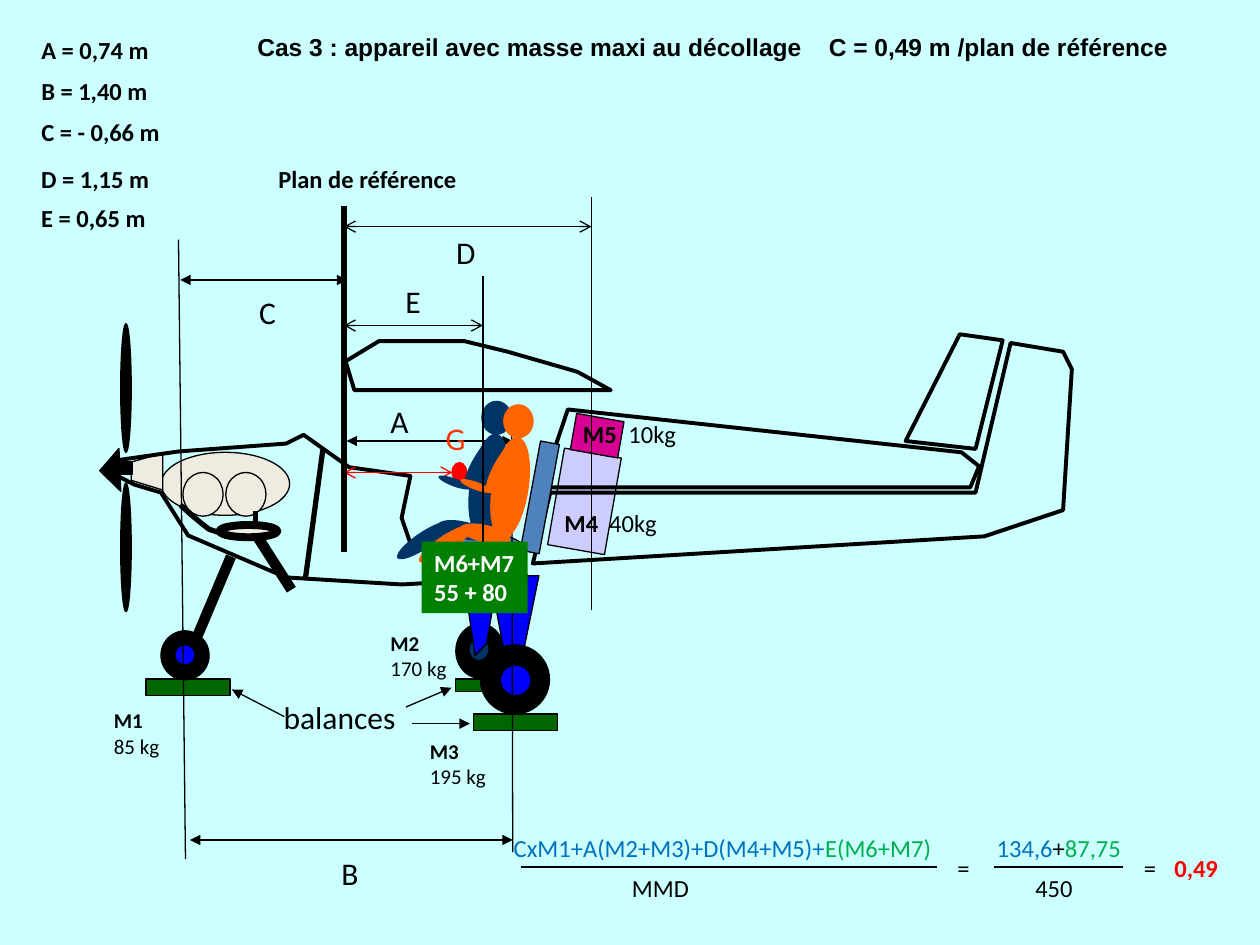
"""Build the weight and balance slide for a light aircraft at maximum take-off mass."""
from lxml import etree
from pptx import Presentation
from pptx.dml.color import RGBColor
from pptx.enum.shapes import MSO_CONNECTOR, MSO_SHAPE
from pptx.oxml.ns import qn
from pptx.util import Pt

RECT = MSO_SHAPE.RECTANGLE
OVAL = MSO_SHAPE.OVAL
CONE = MSO_SHAPE.ISOSCELES_TRIANGLE
STRAIGHT = MSO_CONNECTOR.STRAIGHT
BLACK = RGBColor(0, 0, 0)
WHITE = RGBColor(255, 255, 255)
SKY = RGBColor(0xCC, 0xFF, 0xFF)
PINE = RGBColor(0, 0x66, 0)
GREEN = RGBColor(0, 0x80, 0)
LEAF = RGBColor(0, 0xB0, 0x50)
NAVY = RGBColor(0, 0x33, 0x66)
BLUE = RGBColor(0, 0, 0xFF)
STEEL = RGBColor(0x4F, 0x81, 0xBD)
AZURE = RGBColor(0, 0x70, 0xC0)
LILAC = RGBColor(0xCC, 0xCC, 0xFF)
PINK = RGBColor(0xD6, 0, 0x93)
CREAM = RGBColor(0xEE, 0xEC, 0xE1)
RED = RGBColor(0xFF, 0, 0)
FLAME = RGBColor(0xFF, 0x33, 0)
ORANGE = RGBColor(0xFF, 0x66, 0)

deck = Presentation()
deck.slide_width, deck.slide_height = Pt(720), Pt(540)
slide = deck.slides.add_slide(deck.slide_layouts[6])
slide.background.fill.solid()
slide.background.fill.fore_color.rgb = SKY
shapes = slide.shapes


def add_solids(rows):
    for kind, x, y, w, h, turn, fill, edge in rows:
        shape = shapes.add_shape(kind, Pt(x), Pt(y), Pt(w), Pt(h))
        shape.shadow.inherit = False
        shape.rotation = turn
        shape.fill.solid()
        shape.fill.fore_color.rgb = fill
        if edge:
            shape.line.color.rgb = BLACK
            shape.line.width = Pt(edge)
        else:
            shape.line.fill.background()


def add_lines(rows):
    for x1, y1, x2, y2, ink, width, head, tail in rows:
        line = shapes.add_connector(STRAIGHT, Pt(x1), Pt(y1), Pt(x2), Pt(y2))
        line.line.color.rgb = ink
        line.line.width = Pt(width)
        props = line._element.spPr
        for tag, tip in (("a:headEnd", head), ("a:tailEnd", tail)):
            if tip:
                etree.SubElement(props.find(qn("a:ln")), qn(tag), type=tip)
        etree.SubElement(props, qn("a:effectLst"))


add_solids([
    (RECT, 260.5, 388, 33, 7, 0, PINE, 0.75),
    (RECT, 83.5, 388, 48, 9.5, 0, PINE, 0.75),
    (RECT, 270.5, 408, 48, 9.5, 0, PINE, 0.75),
    (OVAL, 260.5, 356.5, 27.5, 31, 0, BLACK, 0.75),
    (OVAL, 268, 364.5, 11.5, 13, 0, NAVY, 0.75),
    (RECT, 317.5, 258.5, 33, 56, 9.9, LILAC, 0.75),
    (OVAL, 252, 302.5, 49.5, 12, 13.4, STEEL, 0.75),
    (OVAL, 92, 258.5, 73.5, 36, 0, CREAM, 0.75),
    (OVAL, 69, 185, 6, 73.5, 0, BLACK, 0.75),
    (OVAL, 69, 276, 6, 73.5, 0, BLACK, 0.75),
    (OVAL, 104.5, 270, 23, 25, 0, CREAM, 0.75),
    (OVAL, 129, 270, 23, 25, 0, CREAM, 0.75),
])

back = [(265, 330.5), (284.5, 330.5), (278, 368), (271.5, 374.5)]
front = [(280, 329), (308, 329), (299, 373), (289.5, 380)]
nose = [(93, 259), (75, 264), (75, 274.5), (93, 280)]
upper = [(324.5, 234), (549.5, 258.5), (559.5, 266.5), (554.5, 278.5), (309.5, 278.5)]
lower = [(314.5, 281.5), (557.5, 281.5), (577.5, 196), (607.5, 201), (612.5, 211),
         (607.5, 291.5), (562.5, 306.5), (304.5, 322)]
wing = [(197.5, 206.5), (202.5, 223), (349, 223), (330, 212.5), (290, 201),
        (265.5, 195), (216.5, 195)]
fin = [(573, 194.5), (557.5, 256.5), (517.5, 252), (548.5, 191)]
cabin = [(102, 258), (163.5, 253.5), (173.5, 248.5), (199.5, 267), (234.5, 272),
         (229.5, 296), (234.5, 310.5), (296, 319.5), (301, 330), (229.5, 334),
         (163.5, 330), (107.5, 306), (92, 281.5), (77, 277), (67, 272), (67, 263)]
duct = [(103, 288.5), (109, 294), (115, 299), (119.5, 302.5), (124, 304), (129.5, 304.5)]
for points, fill, width, close in (
        (back, BLUE, 0.75, True), (front, BLUE, 0.75, True), (nose, CREAM, 0.75, True),
        (upper, None, 2.25, True), (lower, None, 2.25, True), (wing, None, 2.25, True),
        (fin, None, 2.25, True), (cabin, None, 2.25, True), (duct, None, 3, False)):
    spots = [(Pt(x), Pt(y)) for x, y in points]
    pen = shapes.build_freeform(*spots[0])
    pen.add_line_segments(spots[1:], close=close)
    form = pen.convert_to_shape()
    form.shadow.inherit = False
    if fill:
        form.fill.solid()
        form.fill.fore_color.rgb = fill
    else:
        form.fill.background()
    form.line.color.rgb = BLACK
    form.line.width = Pt(width)

add_lines([
    (132, 318, 113, 363, BLACK, 6, None, None),
    (146, 299, 146, 292, BLACK, 3, None, None),
    (184.5, 257, 174.5, 331, BLACK, 3, None, None),
])
add_solids([
    (CONE, 50.5, 263, 24.5, 11.5, 267.6, BLACK, 0.75),
    (RECT, 68.5, 264, 7, 7, 0, BLACK, 0.75),
    (OVAL, 125.5, 300, 33, 7, 0, CREAM, 4.5),
    (OVAL, 92, 360.5, 27.5, 28, 0, BLACK, 0.75),
    (OVAL, 100, 368.5, 11.5, 11.5, 0, BLUE, 0.75),
    (RECT, 303, 252.5, 11, 63.5, 10.5, STEEL, 0.75),
    (OVAL, 274.5, 368.5, 39.5, 39.5, 0, BLACK, 0.75),
    (OVAL, 286, 380, 17.5, 17.5, 0, BLUE, 0.75),
    (RECT, 327.5, 238.5, 27.5, 21, 10, PINK, 0.75),
    (OVAL, 258, 264, 9, 11.5, 0, RED, 0),
])
add_lines([
    (147, 306.5, 166.5, 337, BLACK, 6, None, None),
    (232, 404, 258, 393, BLACK, 0.75, None, "triangle"),
    (235.5, 413.5, 268.5, 413.5, BLACK, 0.75, None, "triangle"),
    (162.5, 409.5, 132.5, 394, BLACK, 0.75, None, "triangle"),
    (102, 137, 106, 491, BLACK, 0.75, None, None),
    (292.5, 246, 293, 487, BLACK, 0.75, None, None),
    (103, 160, 198.5, 160, BLACK, 0.75, "triangle", "triangle"),
    (198, 252, 293, 252, BLACK, 0.75, "triangle", "triangle"),
    (108.5, 480, 293, 480, BLACK, 0.75, "triangle", "triangle"),
    (196.5, 270, 258.5, 270, RED, 0.75, "arrow", "arrow"),
    (196.5, 118, 196.5, 315.5, BLACK, 3, None, None),
    (338, 112.5, 338, 348.5, BLACK, 0.75, None, None),
    (196.5, 129.5, 338, 129.5, BLACK, 0.75, "arrow", "arrow"),
    (298, 495.5, 535.5, 495.5, BLACK, 0.75, None, None),
    (568, 495.5, 641.5, 495.5, BLACK, 0.75, None, None),
])

body = [(224, 304, 36.5, 9.5, 326.3), (275, 229, 17.5, 19.5, 0),
        (268.5, 247.5, 21, 59, 9.1), (250, 298, 29.5, 10, 12.6),
        (257.5, 260.5, 33, 8.5, 299.2), (250, 273.5, 19.5, 4.5, 20.3)]
for shift, drop, ink in ((0, 0, NAVY), (12.5, 2, ORANGE)):
    add_solids([(OVAL, x + shift, y + drop, w, h, turn, ink, 0)
                for x, y, w, h, turn in body])

add_lines([
    (276, 332, 276, 157.5, BLACK, 0.75, None, None),
    (196.5, 186, 276, 186, BLACK, 0.75, "arrow", "arrow"),
])
add_solids([(RECT, 241, 309.5, 60.5, 41, 0, GREEN, 0)])

labels = [
    (155, 395.5, 82, 29, 18, BLACK, False, ["balances"]),
    (141, 164, 23, 29, 18, BLACK, False, ["C"]),
    (247.5, 236, 32, 29, 18, FLAME, False, ["G"]),
    (216, 226, 25, 29, 18, BLACK, False, ["A"]),
    (188, 484.5, 25, 29, 18, BLACK, False, ["B"]),
    (253.5, 129.5, 26, 29, 18, BLACK, False, ["D"]),
    (224.5, 157.5, 24, 29, 18, BLACK, False, ["E"]),
    (16.5, 16.5, 118, 74, 14, BLACK, True, ["A = 0,74 m", "B = 1,40 m", "C = - 0,66 m"]),
    (16.5, 90, 78, 24, 14, BLACK, True, ["D = 1,15 m"]),
    (16.5, 112.5, 78, 24, 14, BLACK, True, ["E = 0,65 m"]),
    (152, 90, 119, 24, 14, BLACK, True, ["Plan de référence"]),
    (315.5, 286.5, 36, 24, 14, BLACK, True, ["M4"]),
    (341, 286.5, 46, 24, 14, BLACK, False, ["40kg"]),
    (326, 236, 36, 24, 14, BLACK, True, ["M5"]),
    (352, 236, 46, 24, 14, BLACK, False, ["10kg"]),
    (354, 495.5, 49, 24, 14, BLACK, False, ["MMD"]),
    (584.5, 495.5, 38, 24, 14, BLACK, False, ["450"]),
    (540, 484, 23, 24, 14, BLACK, False, ["="]),
    (646.5, 484, 23, 24, 14, BLACK, False, ["="]),
    (664, 484, 42, 24, 14, RED, True, ["0,49"]),
    (140, 15, 330, 24, 14, BLACK, True, ["Cas 3 : appareil avec masse maxi au décollage"]),
    (466.5, 15, 220, 24, 14, BLACK, True, ["C = 0,49 m /plan de référence"]),
    (241, 309.5, 62, 41, 14, WHITE, True, ["M6+M7", "55 + 80"]),
    (58, 401, 44, 36, 12, BLACK, False, ["M1", "85 kg"]),
    (216, 356.5, 49, 36, 12, BLACK, False, ["M2", "170 kg"]),
    (238.5, 418.5, 49, 36, 12, BLACK, False, ["M3", "195 kg"]),
    (286.5, 472.5, 257, 24, 14, AZURE, False,
     [[("CxM1+A(M2+M3)+D(M4+M5)+", AZURE), ("E(M6+M7)", LEAF)]]),
    (562.5, 472.5, 88, 24, 14, AZURE, False,
     [[("134,6", AZURE), ("+", BLACK), ("87,75", LEAF)]]),
]
for x, y, w, h, size, ink, bold, rows in labels:
    frame = shapes.add_textbox(Pt(x), Pt(y), Pt(w), Pt(h)).text_frame
    frame.word_wrap = True
    for spot, row in enumerate(rows):
        para = frame.add_paragraph() if spot else frame.paragraphs[0]
        if len(rows) == 3 and spot:
            para.space_before = Pt(6.5)
        parts = [(row, ink)] if isinstance(row, str) else row
        for word, shade in parts:
            run = para.add_run()
            run.text = word
            run.font.name = "Arial" if y == 15 else "Calibri"
            run.font.size = Pt(size)
            run.font.bold = bold or (size == 12 and spot == 0)
            run.font.color.rgb = shade

deck.save("out.pptx")
